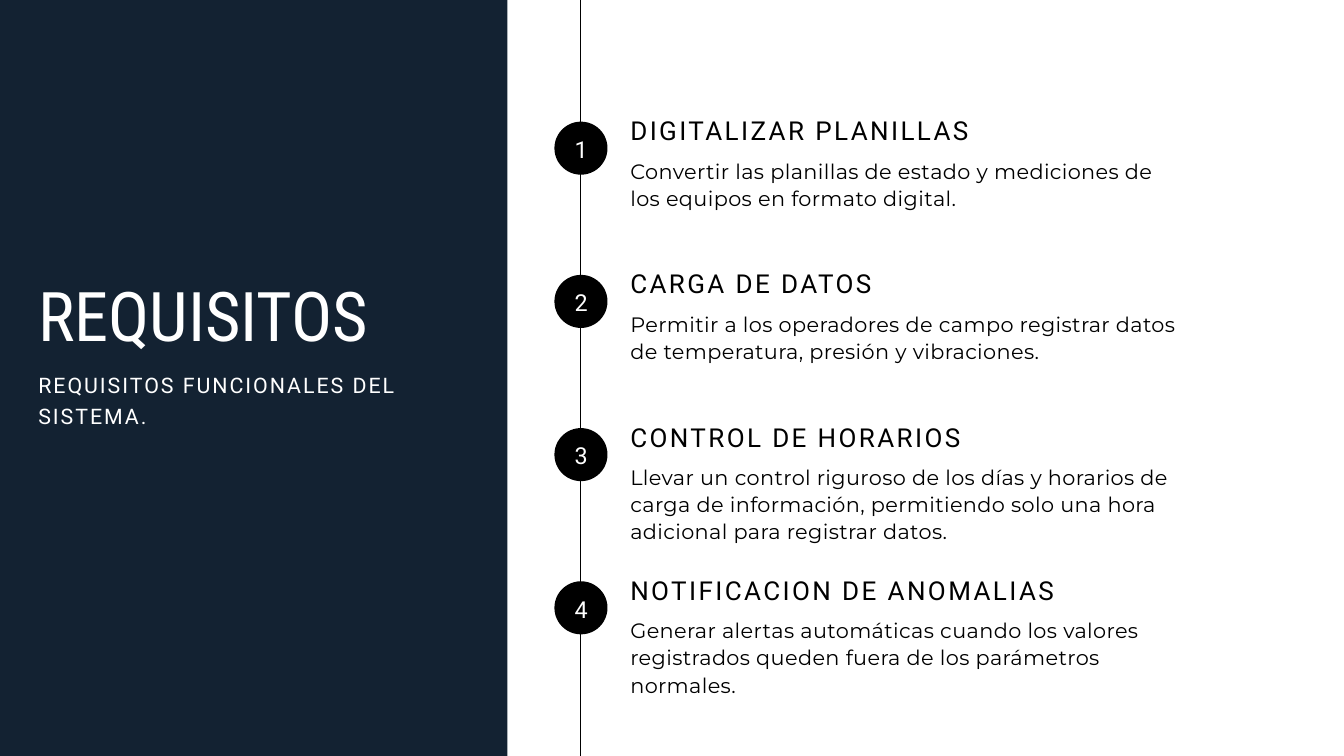
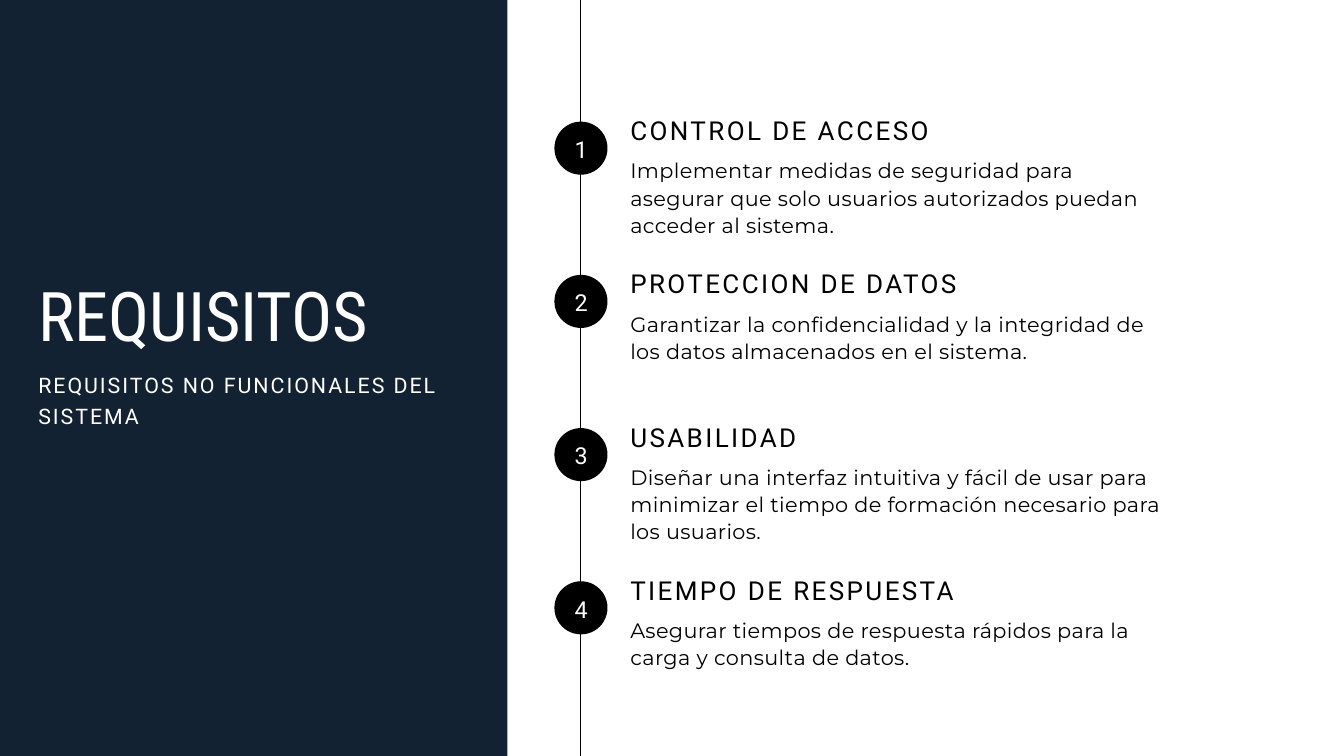
from typing import NamedTuple

from pptx import Presentation
from pptx.dml.color import RGBColor
from pptx.enum.shapes import MSO_CONNECTOR, MSO_SHAPE
from pptx.enum.text import MSO_ANCHOR, MSO_AUTO_SIZE, PP_ALIGN
from pptx.oxml.ns import qn
from pptx.util import Inches, Pt

NAVY = RGBColor(0x13, 0x22, 0x32)
BLACK = RGBColor(0x00, 0x00, 0x00)
WHITE = RGBColor(0xFF, 0xFF, 0xFF)
STRAIGHT = MSO_CONNECTOR.STRAIGHT
OVAL, RECTANGLE = MSO_SHAPE.OVAL, MSO_SHAPE.RECTANGLE
TOP, MIDDLE = MSO_ANCHOR.TOP, MSO_ANCHOR.MIDDLE
LEFT, CENTER = PP_ALIGN.LEFT, PP_ALIGN.CENTER
GROW, FIXED = MSO_AUTO_SIZE.SHAPE_TO_FIT_TEXT, MSO_AUTO_SIZE.NONE

SLIDE_WIDTH, SLIDE_HEIGHT = 20, 11.25
PANEL_WIDTH, PANEL_MARGIN = 7.55, 0.57
TIMELINE_X = 8.64
BADGE_LEFT, BADGE_SIZE = 8.25, 0.79
ITEM_LEFT, FIRST_ITEM_TOP, ITEM_PITCH = 9.38, 1.61, 2.28
BODY_LINE_HEIGHT = 0.405


class TextStyle(NamedTuple):
    font: str
    size: float
    leading: float
    color: RGBColor
    tracking: float = 0


TITLE = TextStyle("Roboto Condensed", 73.4, 84.4, WHITE)
SUBTITLE = TextStyle("Roboto", 22.9, 33.3, WHITE, 2.1)
NUMBER = TextStyle("Roboto", 25, 36.2, WHITE, 2.3)
HEADING = TextStyle("Roboto", 27.9, 40.5, BLACK, 2.6)
BODY = TextStyle("Montserrat", 22.3, 29.2, BLACK, 0.4)

SECTIONS = [
    ("REQUISITOS FUNCIONALES DEL SISTEMA.", [
        ("DIGITALIZAR PLANILLAS", 8.08, 2,
         "Convertir las planillas de estado y mediciones de los equipos "
         "en formato digital."),
        ("CARGA DE DATOS", 8.48, 2,
         "Permitir a los operadores de campo registrar datos de temperatura, "
         "presión y vibraciones."),
        ("CONTROL DE HORARIOS", 8.48, 3,
         "Llevar un control riguroso de los días y horarios de carga de "
         "información, permitiendo solo una hora adicional para registrar datos."),
        ("NOTIFICACION DE ANOMALIAS", 8.08, 3,
         "Generar alertas automáticas cuando los valores registrados queden "
         "fuera de los parámetros normales."),
    ]),
    ("REQUISITOS NO FUNCIONALES DEL SISTEMA", [
        ("CONTROL DE ACCESO", 7.9, 3,
         "Implementar medidas de seguridad para asegurar que solo usuarios "
         "autorizados puedan acceder al sistema."),
        ("PROTECCION DE DATOS", 7.9, 2,
         "Garantizar la confidencialidad y la integridad de los datos "
         "almacenados en el sistema."),
        ("USABILIDAD", 7.9, 3,
         "Diseñar una interfaz intuitiva y fácil de usar para minimizar el "
         "tiempo de formación necesario para los usuarios."),
        ("TIEMPO DE RESPUESTA", 7.9, 2,
         "Asegurar tiempos de respuesta rápidos para la carga y consulta "
         "de datos."),
    ]),
]


class Deck:
    """Builds requirement slides with a side panel and a numbered timeline."""

    def __init__(self):
        self.presentation = Presentation()
        self.presentation.slide_width = Inches(SLIDE_WIDTH)
        self.presentation.slide_height = Inches(SLIDE_HEIGHT)
        self.slide = None

    def add_slide(self):
        blank = self.presentation.slide_layouts[6]
        self.slide = self.presentation.slides.add_slide(blank)
        background = self.slide.background.fill
        background.solid()
        background.fore_color.rgb = WHITE

    def block(self, preset, left, top, width, height, color):
        block = self.slide.shapes.add_shape(
            preset, Inches(left), Inches(top), Inches(width), Inches(height))
        block.shadow.inherit = False
        block.fill.solid()
        block.fill.fore_color.rgb = color
        block.line.fill.background()

    def text(self, words, left, top, width, height, style,
             inset=0, anchor=TOP, align=LEFT, fit=GROW):
        box = self.slide.shapes.add_textbox(
            Inches(left), Inches(top), Inches(width), Inches(height))
        frame = box.text_frame
        frame.word_wrap = True
        frame.auto_size = fit
        frame.vertical_anchor = anchor
        frame.margin_left = frame.margin_right = Inches(inset)
        frame.margin_top = frame.margin_bottom = Inches(inset)
        paragraph = frame.paragraphs[0]
        paragraph.alignment = align
        paragraph.line_spacing = Pt(style.leading)
        run = paragraph.add_run()
        run.text = words
        run.font.name = style.font
        run.font.size = Pt(style.size)
        run.font.color.rgb = style.color
        if style.tracking:
            run.font._element.set("spc", str(round(style.tracking * 100)))

    def timeline(self):
        timeline = self.slide.shapes.add_connector(
            STRAIGHT, Inches(TIMELINE_X), Inches(SLIDE_HEIGHT),
            Inches(TIMELINE_X), Inches(0))
        timeline.line.color.rgb = BLACK
        timeline.line.width = Pt(0.75)
        properties = timeline._element.spPr
        properties.append(properties.makeelement(qn("a:effectLst"), {}))

    def panel(self, subtitle):
        self.block(RECTANGLE, 0, 0, PANEL_WIDTH, SLIDE_HEIGHT, NAVY)
        self.text("REQUISITOS", PANEL_MARGIN, 4.12, 6.63, 1.19, TITLE)
        self.text(subtitle, PANEL_MARGIN, 5.45, 5.99, 0.89, SUBTITLE)

    def badge(self, number, top):
        self.block(OVAL, BADGE_LEFT, top, BADGE_SIZE, BADGE_SIZE, BLACK)
        self.text(str(number), BADGE_LEFT + 0.08, top + 0.01, 0.64, 0.71, NUMBER,
                  inset=0.06, anchor=MIDDLE, align=CENTER, fit=FIXED)

    def requirement(self, index, heading, body_width, body_lines, body):
        top = FIRST_ITEM_TOP + index * ITEM_PITCH
        self.badge(index + 1, top + 0.2)
        self.text(heading, ITEM_LEFT, top, 9.87, 0.54, HEADING)
        self.text(body, ITEM_LEFT, top + 0.71, body_width,
                  body_lines * BODY_LINE_HEIGHT, BODY)


def main():
    deck = Deck()
    for subtitle, requirements in SECTIONS:
        deck.add_slide()
        deck.panel(subtitle)
        deck.timeline()
        for index, requirement in enumerate(requirements):
            deck.requirement(index, *requirement)
    deck.presentation.save("out.pptx")


if __name__ == "__main__":
    main()
